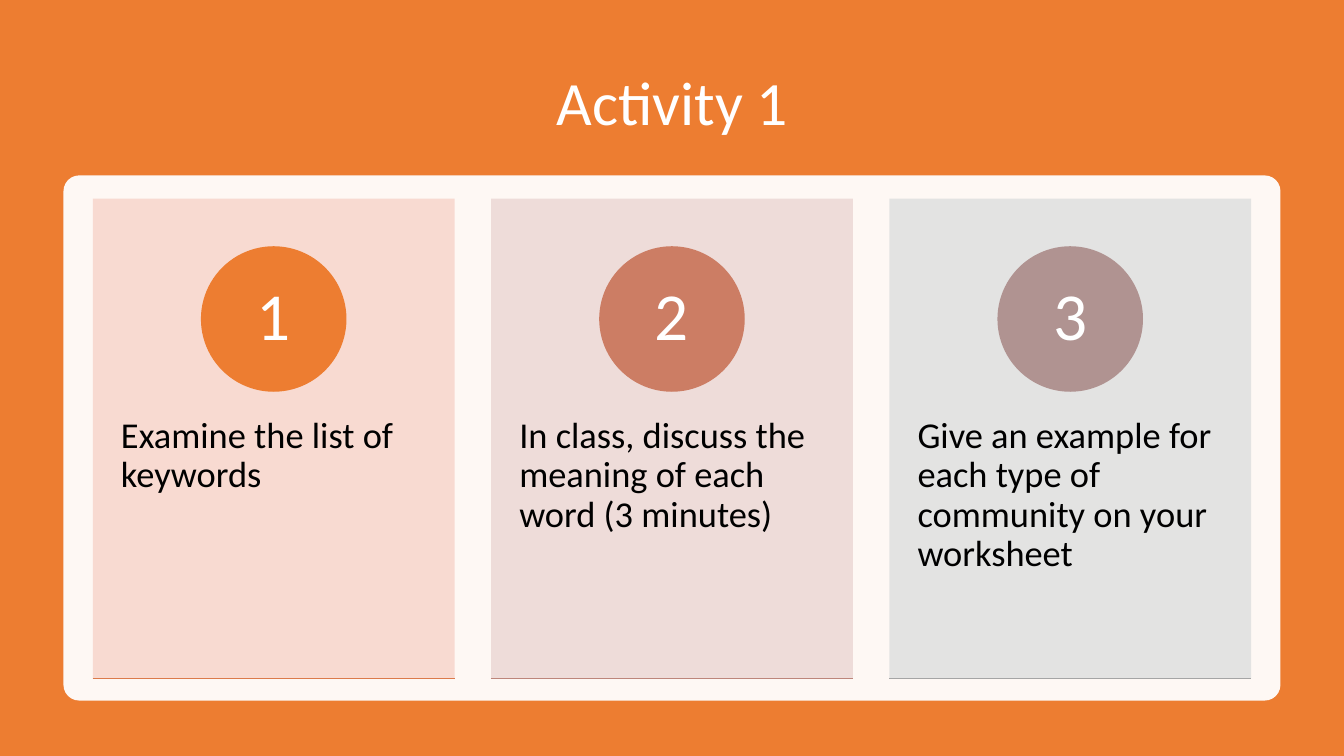
from dataclasses import dataclass

import pptx
import pptx.dml.color
import pptx.enum.shapes
import pptx.enum.text
import pptx.oxml
import pptx.oxml.ns
import pptx.util
from pptx.util import Inches

KIND = pptx.enum.shapes.MSO_SHAPE
ALIGN = pptx.enum.text.PP_ALIGN
ANCHOR = pptx.enum.text.MSO_ANCHOR


@dataclass(frozen=True)
class Theme:
    font: str = "Calibri"
    orange: str = "ED7D31"
    white: str = "FFFFFF"
    black: str = "000000"
    title: int = 44
    number: int = 48
    body: int = 26


THEME = Theme()

# Card text, card fill, circle fill, base line colour
STEPS = [
    ("Examine the list of keywords", "F8D7CE", THEME.orange, "DC7A4B"),
    ("In class, discuss the meaning of each word (3 minutes)",
     "EDD9D7", "CC7D64", "BD867B"),
    ("Give an example for each type of community on your worksheet",
     "E1E1E1", "B09391", "A5A5A5"),
]

# Card grid, in inches
LEFT, TOP, WIDTH, HEIGHT = 0.92, 1.97, 3.59, 4.76
STEP = 3.95
CIRCLE = 1.43


def rgb(code):
    return pptx.dml.color.RGBColor.from_string(code)


def fade(fill, alpha):
    """Set the opacity of a solid fill in percent."""
    color = fill._xPr.find(".//" + pptx.oxml.ns.qn("a:srgbClr"))
    mark = pptx.oxml.parse_xml(
        f'<a:alpha {pptx.oxml.ns.nsdecls("a")} val="{alpha * 1000}"/>')
    color.append(mark)


def add_box(slide, kind, left, top, width, height, color, alpha=100):
    shape = slide.shapes.add_shape(
        kind, Inches(left), Inches(top), Inches(width), Inches(height))
    shape.shadow.inherit = False
    shape.fill.solid()
    shape.fill.fore_color.rgb = rgb(color)
    shape.line.fill.background()
    if alpha < 100:
        fade(shape.fill, alpha)
    return shape


def add_rule(slide, left, top, width, color):
    rule = slide.shapes.add_connector(
        pptx.enum.shapes.MSO_CONNECTOR.STRAIGHT,
        Inches(left), Inches(top), Inches(left + width), Inches(top))
    rule.line.color.rgb = rgb(color)
    rule.line.width = pptx.util.Pt(1)
    rule._element.spPr.append(pptx.oxml.parse_xml(
        f'<a:effectLst {pptx.oxml.ns.nsdecls("a")}/>'))


def set_text(shape, text, size, color, align, anchor, inset=(0.1, 0.05)):
    frame = shape.text_frame
    frame.word_wrap = True
    frame.vertical_anchor = anchor
    frame.margin_left = frame.margin_right = Inches(inset[0])
    frame.margin_top = frame.margin_bottom = Inches(inset[1])
    frame.text = text
    para = frame.paragraphs[0]
    para.alignment = align
    para.line_spacing = 0.9
    para.font.name = THEME.font
    para.font.size = pptx.util.Pt(size)
    para.font.color.rgb = rgb(color)


def add_title(slide, text):
    title = slide.shapes.title
    title.left, title.top = Inches(0.92), Inches(0.5)
    title.width, title.height = Inches(11.5), Inches(1.1)
    set_text(title, text, THEME.title, THEME.white, ALIGN.CENTER,
             ANCHOR.MIDDLE)


def add_card(slide, index, text, tint, accent, base):
    left = LEFT + index * STEP
    add_box(slide, KIND.RECTANGLE, left, TOP, WIDTH, HEIGHT, tint, 90)

    body = slide.shapes.add_textbox(
        Inches(left), Inches(3.78), Inches(WIDTH), Inches(2.86))
    set_text(body, text, THEME.body, THEME.black, ALIGN.LEFT, ANCHOR.TOP,
             (0.28, 0.36))

    circle = add_box(slide, KIND.OVAL, left + (WIDTH - CIRCLE) / 2, 2.45,
                     CIRCLE, CIRCLE, accent)
    circle.line.color.rgb = rgb(accent)
    circle.line.width = pptx.util.Pt(1)
    set_text(circle, str(index + 1), THEME.number, THEME.white,
             ALIGN.CENTER, ANCHOR.MIDDLE, (0.11, 0.01))

    add_rule(slide, left, TOP + HEIGHT, WIDTH, base)


def main():
    deck = pptx.Presentation()
    deck.slide_width, deck.slide_height = Inches(13.33), Inches(7.5)
    slide = deck.slides.add_slide(deck.slide_layouts[5])

    # Backdrop, sent behind the title
    back = add_box(slide, KIND.RECTANGLE, 0, 0, 13.33, 7.5, THEME.orange)
    slide.shapes._spTree.insert(2, back._element)
    add_title(slide, "Activity 1")

    # Panel that holds the cards
    panel = add_box(slide, KIND.ROUNDED_RECTANGLE, 0.63, 1.74, 12.07, 5.21,
                    THEME.white, 95)
    panel.adjustments[0] = 0.03

    # Numbered cards
    for index, step in enumerate(STEPS):
        add_card(slide, index, *step)

    deck.save("out.pptx")


if __name__ == "__main__":
    main()
